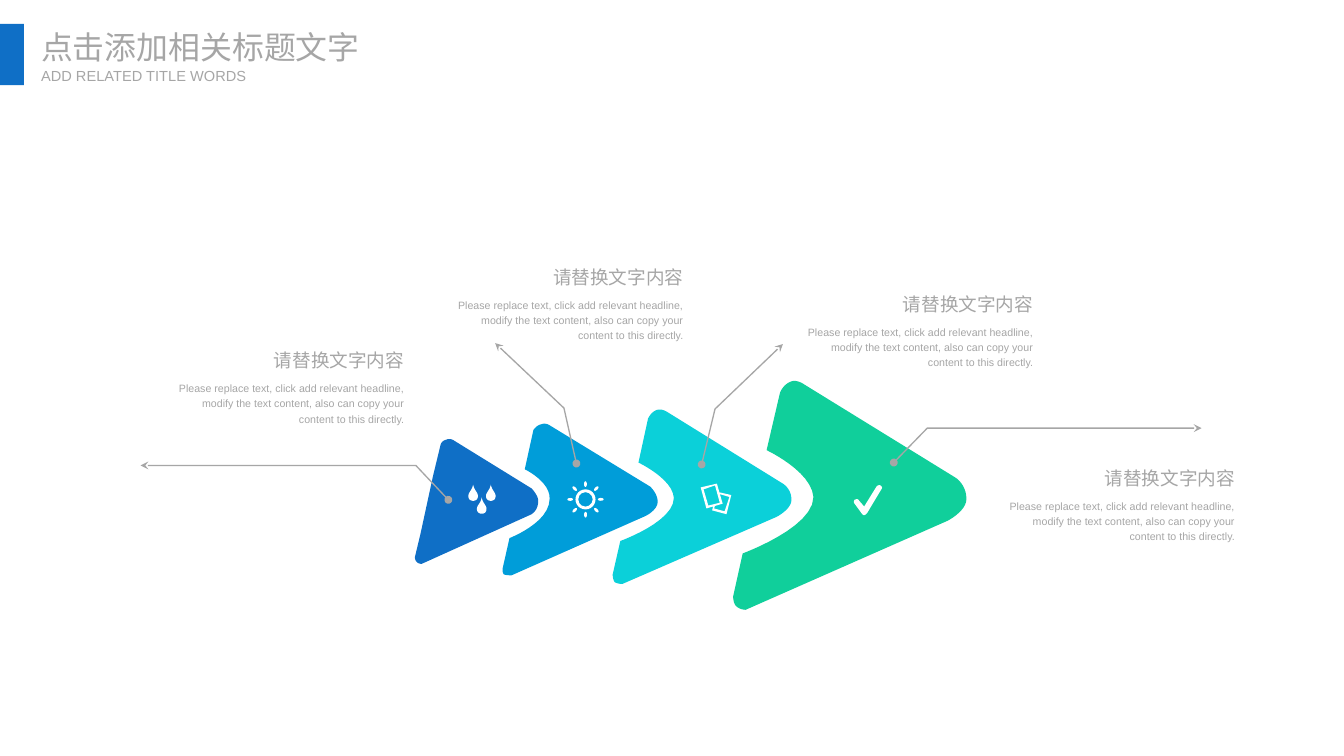
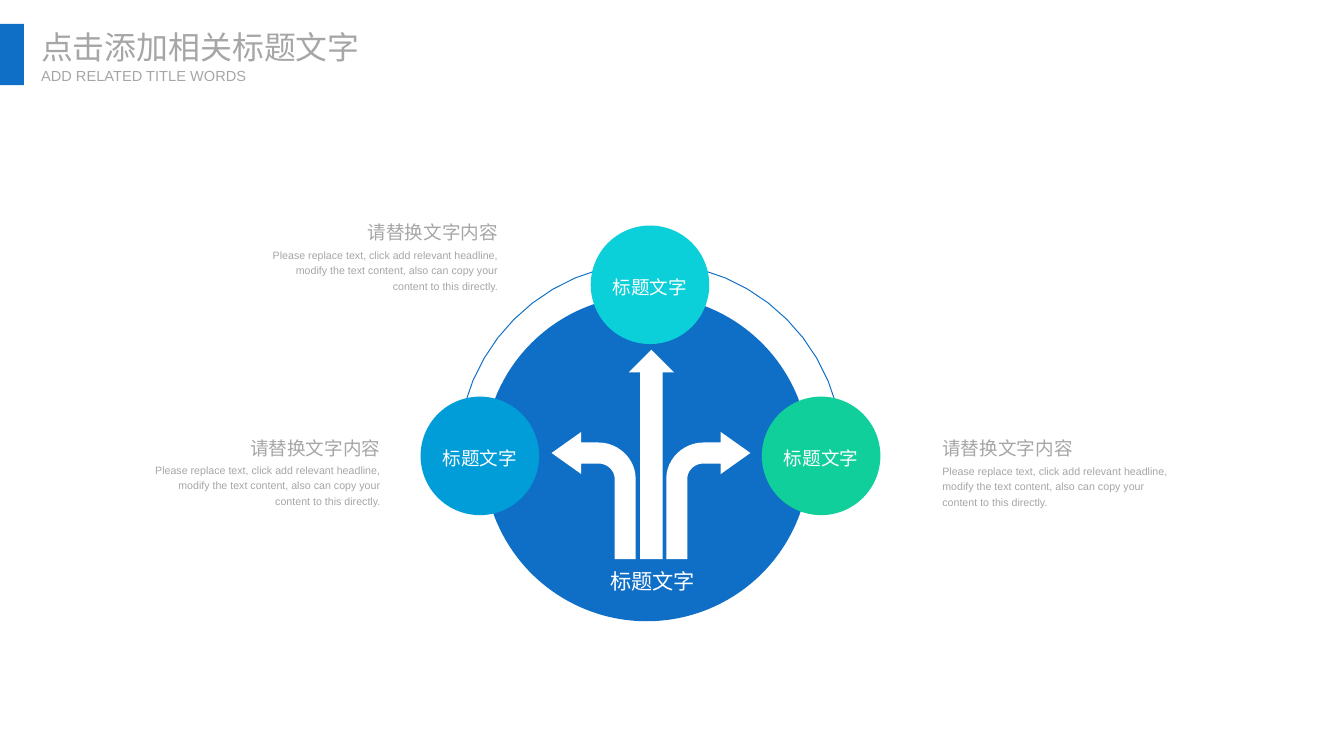
from dataclasses import dataclass
from math import cos, radians, sin

from lxml.etree import SubElement
from pptx import Presentation
from pptx.dml.color import RGBColor
from pptx.enum.shapes import MSO_SHAPE
from pptx.enum.text import MSO_ANCHOR, PP_ALIGN
from pptx.oxml.ns import qn
from pptx.util import Inches, Pt


@dataclass(frozen=True)
class Theme:
    blue: str = "0F6FC6"
    azure: str = "009DD9"
    cyan: str = "0BD0D9"
    green: str = "10CF9B"
    grey: str = "A6A6A6"
    white: str = "FFFFFF"
    font: str = "Arial"
    chinese_font: str = "Noto Sans CJK SC"
    title_size: int = 24
    subtitle_size: int = 11
    center_size: int = 16
    heading_size: int = 14
    body_size: int = 8
    spacing: float = 1.2


@dataclass(frozen=True)
class CalloutStyle:
    heading_width: float
    heading_height: float
    heading_insets: tuple
    body_width: float
    body_height: float
    body_insets: tuple
    body_drop: float


THEME = Theme()
NO_INSETS = (0, 0, 0, 0)
BOX_INSETS = (0.1, 0.05, 0.1, 0.05)
ARROW_CALLOUT = CalloutStyle(1.55, 0.39, (0, 0.11, 0, 0.11), 2.51, 0.63, NO_INSETS, 0.42)
CIRCLE_CALLOUT = CalloutStyle(1.58, 0.36, BOX_INSETS, 2.58, 0.59, BOX_INSETS, 0.3)

HEADING = "请替换文字内容"
BODY = ("Please replace text, click add relevant headline, modify the text content, "
        "also can copy your content to this directly.")
LABEL = "标题文字"

# Outlines: a pair is a corner, six numbers are a Bezier curve
ARROWS = [
    (THEME.green, [
        (10.11, 5.22), (10.11, 5.35, 9.91, 5.45, 9.91, 5.45), (7.8, 6.38),
        (7.8, 6.38, 7.74, 6.38, 7.7, 6.34), (7.67, 6.31, 7.67, 6.24, 7.67, 6.24),
        (7.77, 5.79), (7.77, 5.79, 8.51, 5.52, 8.51, 5.2),
        (8.49, 4.93, 8.02, 4.71, 8.02, 4.71), (8.16, 4.11),
        (8.16, 4.11, 8.19, 4.02, 8.28, 3.99), (8.34, 3.97, 8.41, 4.02, 8.41, 4.02),
        (10, 5), (10, 5, 10.11, 5.07, 10.11, 5.22)]),
    (THEME.cyan, [
        (8.28, 5.23), (8.28, 5.33, 8.12, 5.41, 8.12, 5.41), (6.51, 6.11),
        (6.51, 6.11, 6.46, 6.11, 6.43, 6.09), (6.41, 6.06, 6.41, 6.01, 6.41, 6.01),
        (6.49, 5.66), (6.49, 5.66, 7.05, 5.46, 7.05, 5.21),
        (7.04, 5.01, 6.68, 4.84, 6.68, 4.84), (6.78, 4.38),
        (6.78, 4.38, 6.81, 4.31, 6.87, 4.29), (6.92, 4.27, 6.98, 4.31, 6.98, 4.31),
        (8.19, 5.06), (8.19, 5.06, 8.28, 5.11, 8.28, 5.23)]),
    (THEME.azure, [
        (6.88, 5.25), (6.88, 5.34, 6.75, 5.4, 6.75, 5.4), (5.35, 6.02),
        (5.35, 6.02, 5.3, 6.02, 5.27, 6.01), (5.25, 5.98, 5.26, 5.94, 5.26, 5.94),
        (5.33, 5.63), (5.33, 5.63, 5.75, 5.47, 5.75, 5.22),
        (5.76, 5.04, 5.49, 4.91, 5.49, 4.91), (5.58, 4.5),
        (5.58, 4.5, 5.61, 4.45, 5.66, 4.44), (5.71, 4.42, 5.75, 4.45, 5.75, 4.45),
        (6.8, 5.09), (6.8, 5.09, 6.88, 5.16, 6.88, 5.25)]),
    (THEME.blue, [
        (4.53, 4.98), (4.61, 4.65), (4.61, 4.65, 4.62, 4.61, 4.67, 4.6),
        (4.71, 4.58, 4.75, 4.61, 4.75, 4.61), (5.56, 5.11),
        (5.56, 5.11, 5.63, 5.18, 5.63, 5.24), (5.63, 5.36, 5.54, 5.39, 5.54, 5.39),
        (4.41, 5.9), (4.41, 5.9, 4.38, 5.9, 4.36, 5.88),
        (4.34, 5.86, 4.34, 5.83, 4.34, 5.83), (4.4, 5.58)]),
]
LEADERS = [
    [(9.35, 4.84), (9.7, 4.48), (12.57, 4.48)],
    [(4.69, 5.23), (4.35, 4.87), (1.47, 4.87)],
    [(7.34, 4.86), (7.48, 4.28), (8.19, 3.6)],
    [(6.03, 4.85), (5.9, 4.27), (5.18, 3.59)],
]
PAGES = [
    [(7.33, 5.1), (7.5, 5.06), (7.56, 5.27), (7.39, 5.32)],
    [(7.36, 5.12), (7.48, 5.08), (7.53, 5.26), (7.41, 5.29)],
    [(7.52, 5.15), (7.65, 5.18), (7.6, 5.38), (7.45, 5.34), (7.46, 5.3),
     (7.48, 5.29), (7.47, 5.32), (7.58, 5.35), (7.63, 5.2), (7.53, 5.17)],
]
CHECK = [
    (9.04, 5.39), (9.03, 5.39, 9.02, 5.38, 9.02, 5.38), (8.94, 5.27),
    (8.93, 5.26, 8.93, 5.24, 8.94, 5.23), (8.96, 5.22, 8.97, 5.22, 8.98, 5.23),
    (9.04, 5.3), (9.17, 5.09), (9.18, 5.08, 9.2, 5.07, 9.21, 5.08),
    (9.23, 5.09, 9.23, 5.11, 9.22, 5.12), (9.07, 5.37),
    (9.06, 5.38, 9.05, 5.39, 9.04, 5.39)]
HALF_RING = [
    (6.8, 2.75), (7.92, 2.75, 8.82, 3.65, 8.82, 4.77), (4.79, 4.77),
    (4.79, 3.65, 5.69, 2.75, 6.8, 2.75)]
TURN_RIGHT = [
    (6.97, 5.85), (6.97, 5.01), (6.97, 4.8, 7.15, 4.63, 7.36, 4.63), (7.54, 4.63),
    (7.54, 4.52), (7.85, 4.74), (7.54, 4.96), (7.54, 4.85), (7.36, 4.85),
    (7.27, 4.85, 7.19, 4.92, 7.19, 5.01), (7.19, 5.85)]
TURN_AXIS = 6.81


def paint(shape, fill=None, line=None, width=1):
    shape.shadow.inherit = False
    if fill:
        shape.fill.solid()
        shape.fill.fore_color.rgb = RGBColor.from_string(fill)
    else:
        shape.fill.background()
    if line:
        shape.line.color.rgb = RGBColor.from_string(line)
        shape.line.width = Pt(width)
    else:
        shape.line.fill.background()


def add_preset(slide, kind, box, fill):
    shape = slide.shapes.add_shape(kind, *map(Inches, box))
    paint(shape, fill)
    return shape


def flatten(outline, steps=12):
    """Turn corners and curves into a list of points."""
    points = [outline[0]]
    for segment in outline[1:]:
        if len(segment) == 2:
            points.append(segment)
            continue
        x0, y0 = points[-1]
        x1, y1, x2, y2, x3, y3 = segment
        for step in range(1, steps + 1):
            t = step / steps
            a, b, c, d = (1 - t) ** 3, 3 * t * (1 - t) ** 2, 3 * t * t * (1 - t), t ** 3
            points.append((a * x0 + b * x1 + c * x2 + d * x3,
                           a * y0 + b * y1 + c * y2 + d * y3))
    return points


def add_outline(slide, outlines, close=True, **colours):
    builder = None
    for outline in outlines:
        points = [(Inches(x), Inches(y)) for x, y in flatten(outline)]
        if builder is None:
            builder = slide.shapes.build_freeform(*points[0], scale=1.0)
        else:
            builder.move_to(*points[0])
        builder.add_line_segments(points[1:], close=close)
    shape = builder.convert_to_shape()
    paint(shape, **colours)
    return shape


def mirror(outline, axis):
    return [tuple(2 * axis - value if index % 2 == 0 else value
                  for index, value in enumerate(segment)) for segment in outline]


def write(shape, text, size, colour, align=PP_ALIGN.LEFT, anchor=MSO_ANCHOR.TOP,
          insets=NO_INSETS, spacing=THEME.spacing, font=THEME.font):
    frame = shape.text_frame
    frame.word_wrap = True
    frame.vertical_anchor = anchor
    (frame.margin_left, frame.margin_top,
     frame.margin_right, frame.margin_bottom) = map(Inches, insets)
    paragraph = frame.paragraphs[0]
    paragraph.alignment = align
    paragraph.line_spacing = spacing
    run = paragraph.add_run()
    run.text = text
    run.font.size = Pt(size)
    run.font.name = font
    run.font.color.rgb = RGBColor.from_string(colour)
    properties = run.font._element
    SubElement(properties, qn("a:ea")).set("typeface", THEME.chinese_font)


def add_text(slide, box, text, size, colour=THEME.grey, **layout):
    shape = slide.shapes.add_textbox(*map(Inches, box))
    write(shape, text, size, colour, **layout)


def add_header(slide):
    add_preset(slide, MSO_SHAPE.RECTANGLE, (0, 0.25, 0.25, 0.64), THEME.blue)
    add_text(slide, (0.43, 0.29, 3.4, 0.4), "点击添加相关标题文字", THEME.title_size,
             spacing=1.0, font=THEME.chinese_font)
    add_text(slide, (0.43, 0.7, 2.2, 0.19), "ADD RELATED TITLE WORDS",
             THEME.subtitle_size, spacing=1.0)


def add_callout(slide, style, edge, top, align=PP_ALIGN.RIGHT):
    """Place a heading and its body against one common edge."""
    shift = 1 if align == PP_ALIGN.RIGHT else 0
    add_text(slide, (edge - shift * style.heading_width, top,
                     style.heading_width, style.heading_height),
             HEADING, THEME.heading_size, align=align,
             anchor=MSO_ANCHOR.MIDDLE, insets=style.heading_insets)
    add_text(slide, (edge - shift * style.body_width, top + style.body_drop,
                     style.body_width, style.body_height),
             BODY, THEME.body_size, align=align, insets=style.body_insets)


def add_leader(slide, points):
    shape = add_outline(slide, [points], close=False, line=THEME.grey)
    line = shape.element.spPr.find(qn("a:ln"))
    for end, kind in (("a:headEnd", "oval"), ("a:tailEnd", "stealth")):
        SubElement(line, qn(end)).set("type", kind)


def add_drops(slide):
    drops = []
    for x, y in ((4.95, 5.07), (5.135, 5.07), (5.04, 5.205)):
        drops.append([
            (x, y), (x + 0.01, y + 0.06, x + 0.05, y + 0.08, x + 0.05, y + 0.12),
            (x + 0.05, y + 0.15, x + 0.03, y + 0.17, x, y + 0.17),
            (x - 0.03, y + 0.17, x - 0.05, y + 0.15, x - 0.05, y + 0.12),
            (x - 0.05, y + 0.08, x - 0.01, y + 0.06, x, y)])
    add_outline(slide, drops, fill=THEME.white)


def add_sun(slide, x=6.125, y=5.225, radius=0.16):
    ring = add_preset(slide, MSO_SHAPE.DONUT, (x - 0.105, y - 0.105, 0.21, 0.21), THEME.white)
    ring.adjustments[0] = 0.14
    for angle in range(0, 360, 45):
        ray_x = x + radius * cos(radians(angle))
        ray_y = y + radius * sin(radians(angle))
        ray = add_preset(slide, MSO_SHAPE.OVAL, (ray_x - 0.03, ray_y - 0.015, 0.06, 0.03),
                         THEME.white)
        ray.rotation = angle


def build_arrow_slide(slide):
    for colour, outline in ARROWS:
        add_outline(slide, [outline], fill=colour)
    for points in LEADERS:
        add_leader(slide, points)
    # Icons
    add_drops(slide)
    add_sun(slide)
    add_outline(slide, PAGES, fill=THEME.white)
    add_outline(slide, [CHECK], fill=THEME.white)
    # Texts
    for edge, top in ((4.23, 3.55), (7.15, 2.68), (10.81, 2.96), (12.92, 4.78)):
        add_callout(slide, ARROW_CALLOUT, edge, top)
    add_header(slide)


def build_circle_slide(slide):
    # Hub with its three ways out
    add_outline(slide, [HALF_RING], line=THEME.blue, width=0.75)
    add_preset(slide, MSO_SHAPE.OVAL, (5.06, 3.09, 3.41, 3.41), THEME.blue)
    add_preset(slide, MSO_SHAPE.UP_ARROW, (6.58, 3.66, 0.47, 2.19), THEME.white)
    for outline in (TURN_RIGHT, mirror(TURN_RIGHT, TURN_AXIS)):
        add_outline(slide, [outline], fill=THEME.white)
    add_text(slide, (6.25, 5.9, 1.15, 0.31), LABEL, THEME.center_size, THEME.white,
             align=PP_ALIGN.CENTER, anchor=MSO_ANCHOR.MIDDLE, insets=BOX_INSETS)
    # Satellites
    for left, top, colour in ((4.4, 4.15, THEME.azure), (7.97, 4.15, THEME.green),
                              (6.18, 2.36, THEME.cyan)):
        circle = add_preset(slide, MSO_SHAPE.OVAL, (left, top, 1.24, 1.24), colour)
        write(circle, LABEL, THEME.heading_size, THEME.white,
              align=PP_ALIGN.CENTER, anchor=MSO_ANCHOR.MIDDLE)
    # Texts
    add_callout(slide, CIRCLE_CALLOUT, 9.76, 4.49, PP_ALIGN.LEFT)
    for edge, top in ((5.31, 2.23), (4.08, 4.48)):
        add_callout(slide, CIRCLE_CALLOUT, edge, top)
    add_header(slide)


def main():
    presentation = Presentation()
    presentation.slide_width = Inches(14.06)
    presentation.slide_height = Inches(7.91)
    for build in (build_arrow_slide, build_circle_slide):
        build(presentation.slides.add_slide(presentation.slide_layouts[6]))
    presentation.save("out.pptx")


if __name__ == "__main__":
    main()
